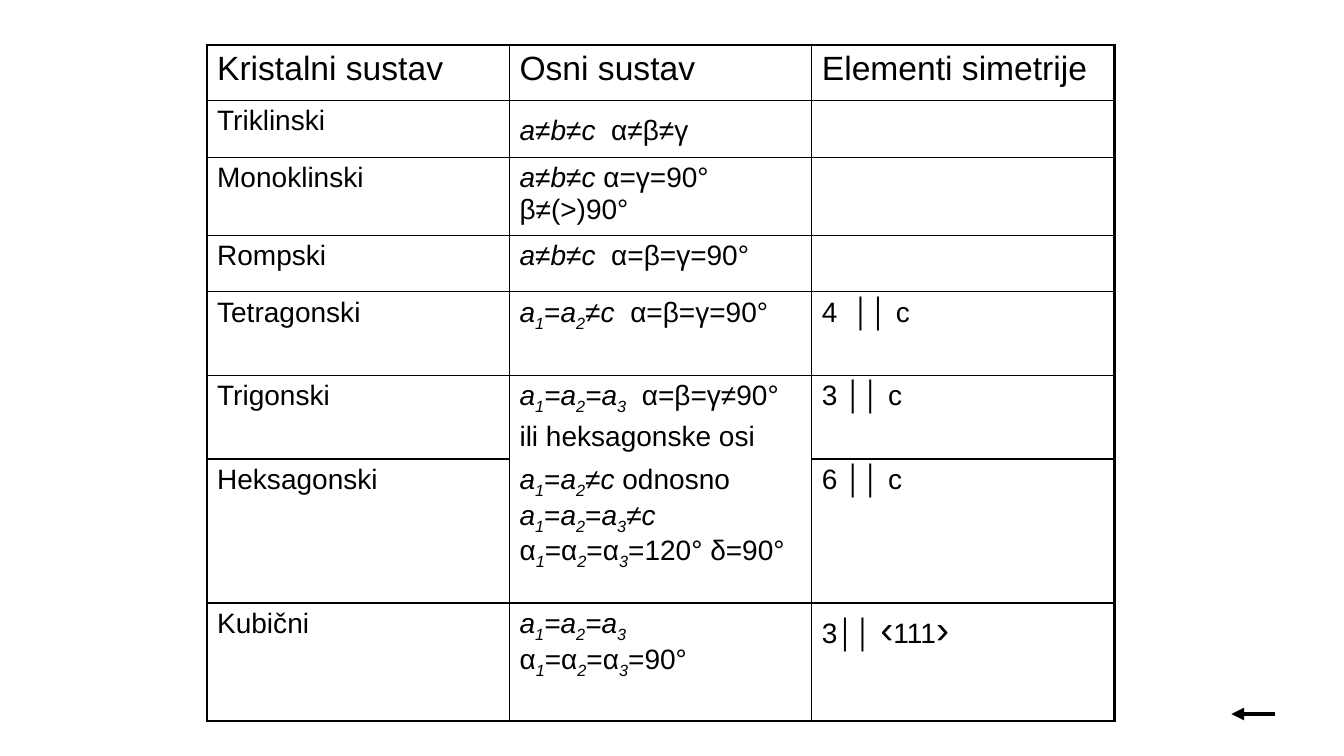
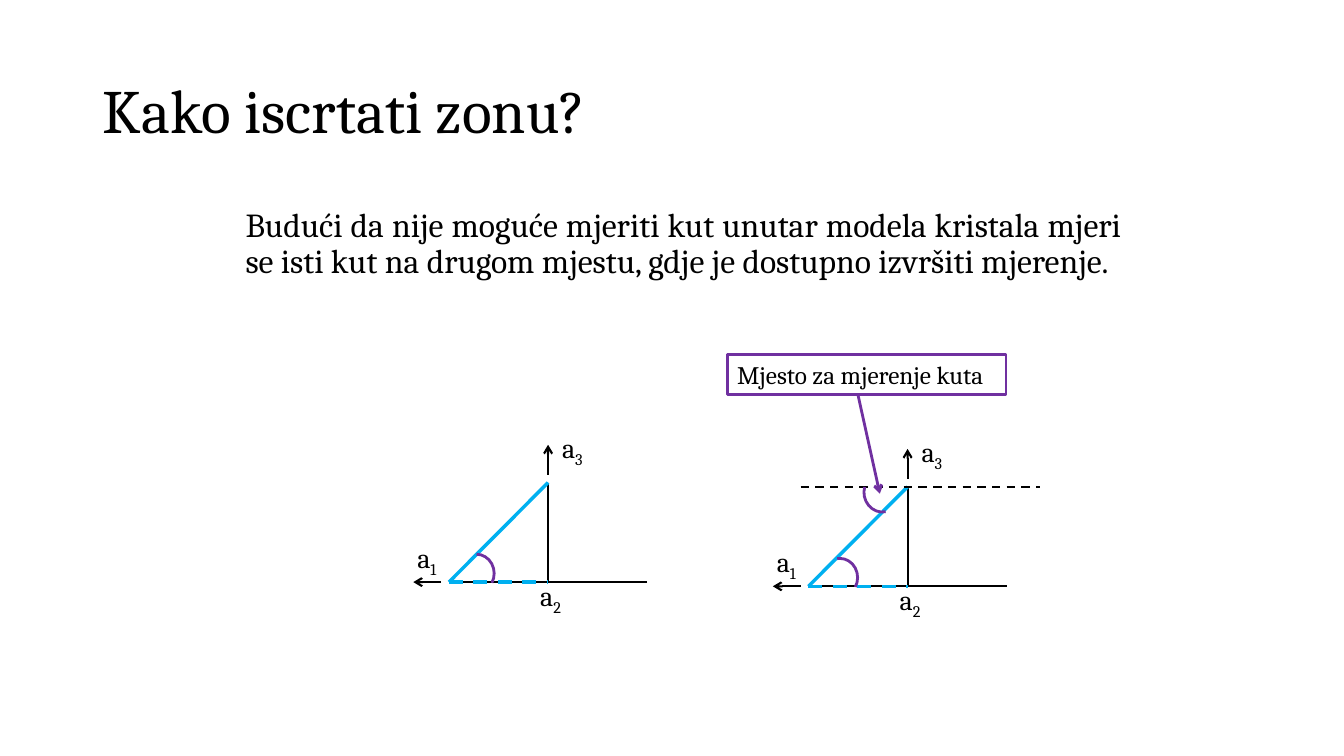
from collections import namedtuple
from itertools import groupby

from lxml import etree
from pptx import Presentation
from pptx.dml.color import RGBColor
from pptx.enum.dml import MSO_LINE
from pptx.enum.shapes import MSO_CONNECTOR, MSO_SHAPE
from pptx.enum.text import MSO_ANCHOR, MSO_AUTO_SIZE, PP_ALIGN
from pptx.oxml.ns import qn
from pptx.util import Emu, Inches, Pt

COLORS = {"ink": "000000", "edge": "00B0F0", "angle": "7030A0"}
SLIDE_SIZE = (Inches(13.33), Inches(7.5))
COLUMNS, ROWS = 160, 90
COLUMN, ROW = SLIDE_SIZE[0] / COLUMNS, SLIDE_SIZE[1] / ROWS
TABLE_FONT, SLIDE_FONT = "Arial", "Cambria"
THIN, THICK = 1, 2.25
LARGE_SIZE = 28

TITLE_FRAME = {"vertical_anchor": MSO_ANCHOR.MIDDLE, "word_wrap": True}
TITLE_PARAGRAPH = {"alignment": PP_ALIGN.LEFT, "line_spacing": 0.9}
BODY_PARAGRAPH = {"alignment": PP_ALIGN.JUSTIFY, "line_spacing": 0.9, "space_before": Pt(10)}
LABEL_FRAME = {"word_wrap": False, "auto_size": MSO_AUTO_SIZE.SHAPE_TO_FIT_TEXT}
CALLOUT_FRAME = {"word_wrap": True, "vertical_anchor": MSO_ANCHOR.TOP}
LEFT_PARAGRAPH = {"alignment": PP_ALIGN.LEFT}
CELL_INSETS = {"margin_left": Inches(0.1), "margin_right": Inches(0.1),
               "margin_top": Inches(0.05), "margin_bottom": Inches(0.05)}

ROW_HEIGHTS = [6.6, 6.8, 9.24, 6.72, 9.96, 9.96, 17.16, 14.04]
CRYSTAL_SYSTEMS = [
    ("Kristalni sustav", "Osni sustav", "Elementi simetrije"),
    ("Triklinski", "*a*≠*b*≠*c*~α≠β≠γ^ ^", ""),
    ("Monoklinski", "*a*≠*b*≠*c* α=γ=90° β≠(>)90°", ""),
    ("Rompski", "*a*≠*b*≠*c*~α=β=γ=90°", ""),
    ("Tetragonski", "*a_1*=*a_2*≠*c*~α=β=γ=90°", "4~││ c"),
    ("Trigonski", "*a_1=a_2=a_3*~α=β=γ≠90°\nili heksagonske osi", "3 ││ c"),
    ("Heksagonski",
     "*a_1*=*a_2*≠*c* odnosno *a_1*=*a_2*=*a_3*≠*c* α*_1*=α*_2*=α*_3*=120° δ=90°", "6 ││ c"),
    ("Kubični", "*a_1=a_2=a_3*~α*_1*=α*_2*=α*_3*=90°", "3││ ^‹^111^›^"),
]
OPEN_EDGES = {(5, 1, "B"), (6, 1, "T")}

Style = namedtuple("Style", "italic large subscript wide")


class Box(namedtuple("Box", "left top width height")):
    def point(self, across, down):
        return self.left + across * self.width, self.top + down * self.height

    def place(self, across, down, columns, rows):
        return Box(*self.point(across, down), columns, rows)

    def emu(self):
        return (Emu(round(self.left * COLUMN)), Emu(round(self.top * ROW)),
                Emu(round(self.width * COLUMN)), Emu(round(self.height * ROW)))


def apply(target, values):
    for name, value in values.items():
        setattr(target, name, value)


def rgb(name):
    return RGBColor.from_string(COLORS[name])


def styled_characters(text):
    italic = large = subscript = False
    for character in text:
        if character == "*":
            italic = not italic
        elif character == "^":
            large = not large
        elif character == "_":
            subscript = True
        else:
            wide = character == "~"
            yield Style(italic, large, subscript, wide), " " if wide else character
            subscript = False


def write_text(frame, text, size, font, paragraph_format=LEFT_PARAGRAPH, gap=0):
    for index, line in enumerate(text.split("\n")):
        paragraph = frame.add_paragraph() if index else frame.paragraphs[0]
        apply(paragraph, paragraph_format)
        if index:
            paragraph.space_before = Pt(gap)
        for style, pairs in groupby(styled_characters(line), key=lambda pair: pair[0]):
            run = paragraph.add_run()
            run.text = "".join(character for _, character in pairs)
            apply(run.font, {"name": font, "italic": style.italic,
                             "size": Pt(LARGE_SIZE if style.large else size)})
            run.font.color.rgb = rgb("ink")
            properties = run._r.get_or_add_rPr()
            if style.subscript:
                properties.set("baseline", "-25000")
            if style.wide:
                properties.set("spc", str(round(size * 28)))


def add_line(shapes, start, end, color="ink", width=1.5, dashed=False, head=None):
    positions = [Emu(round(value)) for x, y in (start, end) for value in (x * COLUMN, y * ROW)]
    connector = shapes.add_connector(MSO_CONNECTOR.STRAIGHT, *positions)
    connector.line.color.rgb = rgb(color)
    connector.line.width = Pt(width)
    if dashed:
        connector.line.dash_style = MSO_LINE.DASH
    if head:
        outline = connector.line._get_or_add_ln()
        etree.SubElement(outline, qn("a:tailEnd"), type=head)
    etree.SubElement(connector._element.spPr, qn("a:effectLst"))


def add_outline(slide, kind, box):
    shape = slide.shapes.add_shape(kind, *box.emu())
    shape.shadow.inherit = False
    shape.fill.background()
    shape.line.color.rgb = rgb("angle")
    shape.line.width = Pt(2)
    return shape


def add_arc(slide, box, start=162, rotation=0):
    arc = add_outline(slide, MSO_SHAPE.ARC, box)
    arc.adjustments[0] = start
    arc.adjustments[1] = 18.95
    arc.rotation = rotation


def set_border(cell, side, width):
    border = etree.SubElement(cell._tc.get_or_add_tcPr(), qn(f"a:ln{side}"), w=str(Pt(width)))
    if width:
        fill = etree.SubElement(border, qn("a:solidFill"))
        etree.SubElement(fill, qn("a:srgbClr"), val=COLORS["ink"])
    else:
        etree.SubElement(border, qn("a:noFill"))


def add_crystal_table(slide, box):
    row_count, column_count = len(CRYSTAL_SYSTEMS), len(CRYSTAL_SYSTEMS[0])
    table = slide.shapes.add_table(row_count, column_count, *box.emu()).table
    apply(table, {"first_row": False, "horz_banding": False})
    for column in table.columns:
        column.width = Emu(round(box.width / column_count * COLUMN))
    for row_index, texts in enumerate(CRYSTAL_SYSTEMS):
        table.rows[row_index].height = Emu(round(ROW_HEIGHTS[row_index] * ROW))
        for column_index, text in enumerate(texts):
            cell = table.cell(row_index, column_index)
            apply(cell, CELL_INSETS)
            outer = {"L": column_index == 0, "R": column_index == column_count - 1,
                     "T": row_index == 0, "B": row_index == row_count - 1}
            for side, is_outer in outer.items():
                is_open = (row_index, column_index, side) in OPEN_EDGES
                set_border(cell, side, 0 if is_open else THICK if is_outer else THIN)
            cell.fill.background()
            write_text(cell.text_frame, text, 20 if row_index else 24, TABLE_FONT, gap=4)


def add_axes(slide, box, arc_across, arc_start=162):
    shapes = slide.shapes.add_group_shape().shapes
    foot, apex = box.point(0.5, 1), box.point(0.5, 0)
    corner, far_end = box.point(0, 1), box.point(1, 1)
    add_line(shapes, apex, foot)
    add_line(shapes, far_end, corner)
    add_line(shapes, corner, apex, "edge", 2.5)
    add_line(shapes, corner, foot, "edge", 2.5, dashed=True)
    add_line(shapes, box.point(0.5, -0.08), box.point(0.5, -0.38), head="arrow")
    add_line(shapes, box.point(-0.04, 1), box.point(-0.18, 1), head="arrow")
    for text, across, down in (("a_3", 0.52, -0.57), ("a_1", -0.21, 0.53), ("a_2", 0.41, 0.91)):
        label = shapes.add_textbox(*box.place(across, down, 5.28, 5.28).emu())
        apply(label.text_frame, LABEL_FRAME)
        write_text(label.text_frame, text, 20, SLIDE_FONT)
    add_arc(slide, box.place(arc_across, 0.72, 4.2, 4.56), arc_start)


def add_measuring_place(slide, box):
    add_line(slide.shapes, box.point(-0.04, 0), box.point(1.17, 0), dashed=True)
    add_arc(slide, box.place(0.28, -0.13, 4.2, 4.56), rotation=167.9)
    add_line(slide.shapes, box.point(0.25, -0.92), box.point(0.36, 0.07), "angle", 2, head="arrow")
    callout = add_outline(slide, MSO_SHAPE.RECTANGLE, box.place(-0.41, -1.33, 33.2, 4.8))
    apply(callout.text_frame, CALLOUT_FRAME)
    write_text(callout.text_frame, "Mjesto za mjerenje kuta", 18, SLIDE_FONT)


def set_title(slide, text, box):
    title = slide.shapes.title
    apply(title, dict(zip(("left", "top", "width", "height"), box.emu())))
    apply(title.text_frame, TITLE_FRAME)
    write_text(title.text_frame, text, 44, SLIDE_FONT, TITLE_PARAGRAPH)


def add_body(slide, text, box):
    body = slide.shapes.add_textbox(*box.emu())
    body.text_frame.word_wrap = True
    write_text(body.text_frame, text, 24, SLIDE_FONT, BODY_PARAGRAPH)


def build_table_slide(presentation):
    slide = presentation.slides.add_slide(presentation.slide_layouts[6])
    add_crystal_table(slide, Box(24.65, 5.36, 108, sum(ROW_HEIGHTS)))
    add_line(slide.shapes, (151.8, 85), (146.6, 85), width=3, head="triangle")


def build_zone_slide(presentation):
    slide = presentation.slides.add_slide(presentation.slide_layouts[5])
    set_title(slide, "Kako iscrtati zonu?", Box(11, 4.8, 138, 17.4))
    add_body(slide, "Budući da nije moguće mjeriti kut unutar modela kristala mjeri se isti kut "
                    "na drugom mjestu, gdje je dostupno izvršiti mjerenje.",
             Box(28.05, 24.2, 106.6, 24.6))
    first_axes = Box(53.45, 57.45, 23.6, 11.85)
    second_axes = first_axes._replace(left=96.25, top=57.95)
    add_axes(slide, first_axes, 0.05)
    add_axes(slide, second_axes, 0.07, 157.02)
    add_measuring_place(slide, second_axes)


def main():
    presentation = Presentation()
    presentation.slide_width, presentation.slide_height = SLIDE_SIZE
    build_table_slide(presentation)
    build_zone_slide(presentation)
    presentation.save("out.pptx")


if __name__ == "__main__":
    main()
